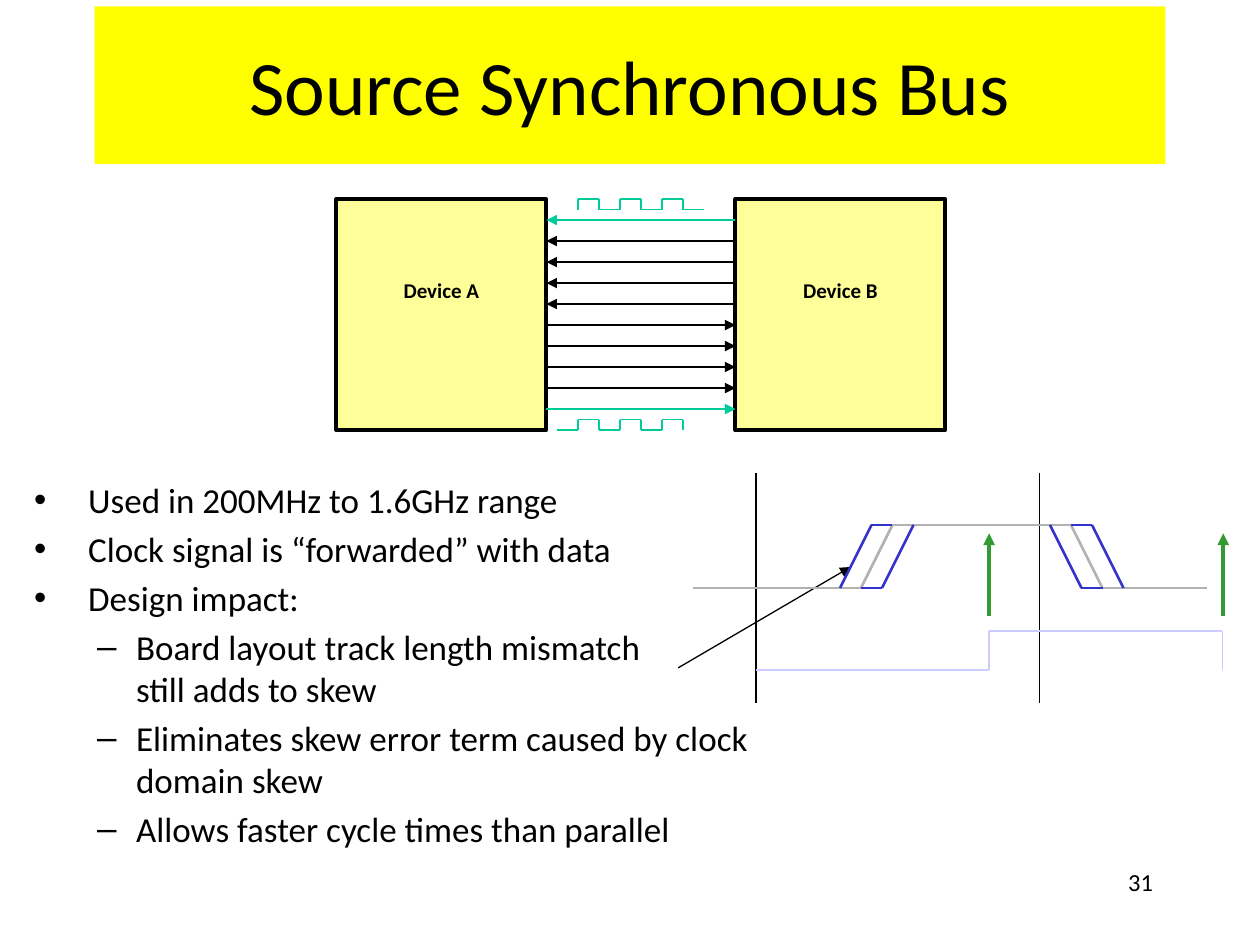
from itertools import pairwise

from lxml import etree
from pptx import Presentation
from pptx.dml.color import RGBColor
from pptx.enum.shapes import MSO_CONNECTOR as Connector, MSO_SHAPE as Shape
from pptx.enum.text import MSO_ANCHOR as Anchor, MSO_AUTO_SIZE as AutoSize, PP_ALIGN as Align
from pptx.oxml.ns import qn
from pptx.util import Inches, Pt

FONT = "Calibri"
BLACK, GREEN, YELLOW, CREAM = "000000", "00CC99", "FFFF00", "FFFF99"
GREY, BLUE, LILAC, STROBE = "B2B2B2", "3333CC", "CCCCFF", "339933"
UNIT = 1 / 6  # grid step of both diagrams, in inches

POINTS = [
    (0, "Used in 200MHz to 1.6GHz range"),
    (0, "Clock signal is “forwarded” with data"),
    (0, "Design impact:"),
    (1, "Board layout track length mismatch \vstill adds to skew"),
    (1, "Eliminates skew error term caused by clock domain skew"),
    (1, "Allows faster cycle times than parallel"),
]
LEVEL_INDENTS = [(0.43, -0.43), (0.81, -0.31)]  # left margin, first line


def color(hex_text):
    return RGBColor.from_string(hex_text)


def fill(shape, hex_text):
    shape.fill.solid()
    shape.fill.fore_color.rgb = color(hex_text)


def set_all(target, values):
    for name, value in values.items():
        setattr(target, name, value)


def place(shape, left, top, width, height):
    set_all(shape, {"left": Inches(left), "top": Inches(top),
                    "width": Inches(width), "height": Inches(height)})


def style_text(paragraph, size, align=Align.LEFT, bold=False):
    paragraph.alignment = align
    for run in paragraph.runs:
        set_all(run.font, {"name": FONT, "size": Pt(size), "bold": bold})
        run.font.color.rgb = color(BLACK)


def draw_line(shapes, start, end, hex_text, weight, arrow=None):
    """Draw a line; arrow is "head" for a tip at the start, "tail" at the end."""
    line = shapes.add_connector(Connector.STRAIGHT, *map(Inches, (*start, *end)))
    line.line.color.rgb = color(hex_text)
    line.line.width = Pt(weight)
    properties = line._element.spPr
    if arrow:
        etree.SubElement(properties.find(qn("a:ln")), qn(f"a:{arrow}End"), type="triangle")
    etree.SubElement(properties, qn("a:effectLst"))


def draw_trace(shapes, points, hex_text, weight):
    for start, end in pairwise(points):
        draw_line(shapes, start, end, hex_text, weight)


def grid_from(left, top):
    """Return a function that turns grid steps into inches on the slide."""
    return lambda x, y: (left + x * UNIT, top + y * UNIT)


def add_title(slide, left, top, width, height):
    title = slide.shapes.title
    place(title, left, top, width, height)
    fill(title, YELLOW)
    title.text_frame.text = "Source Synchronous Bus"
    title.text_frame.vertical_anchor = Anchor.MIDDLE
    style_text(title.text_frame.paragraphs[0], 44, Align.CENTER)


def add_device(slide, label, left, top, width, height):
    device = slide.shapes.add_shape(
        Shape.RECTANGLE, *map(Inches, (left, top, width, height)))
    device.shadow.inherit = False
    fill(device, CREAM)
    device.line.color.rgb = color(BLACK)
    device.line.width = Pt(2.25)
    frame = device.text_frame
    set_all(frame, {"text": label, "word_wrap": False, "vertical_anchor": Anchor.MIDDLE,
                    "margin_bottom": Inches(0.43)})
    style_text(frame.paragraphs[0], 12, Align.CENTER, bold=True)


def add_clock(slide, left, top, direction):
    """Three pulses running right (direction 1) or left (-1) from left."""
    at = grid_from(left, top)
    levels = [0.5, 0, 0.5, 0, 0.5, 0]
    steps = [(direction * (x + side), y) for x, y in enumerate(levels) for side in (0, 1)]
    steps.append((direction * len(levels), 0.5))
    draw_trace(slide.shapes.add_group_shape().shapes,
               [at(*step) for step in steps], GREEN, 0.75)


def add_bus(slide, left, top):
    at = grid_from(left, top)
    for label, column in (("Device A", 0), ("Device B", 19)):
        add_device(slide, label, *at(column, 0), 10 * UNIT, 11 * UNIT)
    for row in range(1, 11):
        draw_line(slide.shapes, at(10, row), at(19, row),
                  GREEN if row in (1, 10) else BLACK, 1.5,
                  "head" if row <= 5 else "tail")
    add_clock(slide, *at(10.5, 10.5), direction=1)
    add_clock(slide, *at(17.5, 0), direction=-1)


def add_points(slide, left, top, width, height):
    body = slide.placeholders[1]
    place(body, left, top, width, height)
    frame = body.text_frame
    set_all(frame, {"auto_size": AutoSize.NONE, "word_wrap": True,
                    "vertical_anchor": Anchor.TOP})
    for index, (level, wording) in enumerate(POINTS):
        paragraph = frame.add_paragraph() if index else frame.paragraphs[0]
        set_all(paragraph, {"text": wording, "level": level, "space_before": Pt(4)})
        style_text(paragraph, 20)
        margin, first_line = LEVEL_INDENTS[level]
        properties = paragraph._p.get_or_add_pPr()
        properties.set("marL", str(Inches(margin)))
        properties.set("indent", str(Inches(first_line)))


def add_timing(slide, left, top):
    at = grid_from(left, top)
    high, low = 2.5, 5.5

    def group_traces(traces):
        shapes = slide.shapes.add_group_shape().shapes
        for hex_text, weight, steps in traces:
            draw_trace(shapes, [at(*step) for step in steps], hex_text, weight)

    group_traces([(BLACK, 0.75, [(x, 0), (x, 11)]) for x in (3, 16.5)])
    draw_line(slide.shapes, at(-0.7, 9.3), at(7.5, 4.5), BLACK, 0.75, "tail")
    group_traces([(LILAC, 0.75, [(3, 9.4), (14.1, 9.4), (14.1, 7.55),
                                 (25.2, 7.55), (25.2, 9.4)])])
    for x in (14.1, 25.25):
        draw_line(slide.shapes, at(x, 2.9), at(x, 6.85), STROBE, 2.25, "head")

    data = [(0, low), (8, low), (9.5, high), (18, high), (19.5, low), (24.5, low)]
    skews = [
        [(7, low), (8.5, high), (9.5, high)],
        [(8, low), (9, low), (10.5, high)],
        [(17, high), (18.5, low), (19.5, low)],
        [(18, high), (19, high), (20.5, low)],
    ]
    group_traces([(GREY, 1.5, data)] + [(BLUE, 1.5, skew) for skew in skews])


def add_page_number(slide, left, top, width, height):
    number = slide.shapes.add_textbox(*map(Inches, (left, top, width, height)))
    set_all(number.text_frame, {"text": "31", "word_wrap": True})
    style_text(number.text_frame.paragraphs[0], 14, Align.RIGHT)


def main():
    deck = Presentation()
    deck.slide_width, deck.slide_height = Inches(10), Inches(7.5)
    slide = deck.slides.add_slide(deck.slide_layouts[1])
    add_title(slide, 0.75, 0.05, 8.5, 1.25)
    add_bus(slide, 2.67, 1.58)
    add_points(slide, 0.17, 3.75, 5.9, 3.67)
    add_timing(slide, 5.5, 3.75)
    add_page_number(slide, 7.17, 6.83, 2.08, 0.5)
    deck.save("out.pptx")


if __name__ == "__main__":
    main()
